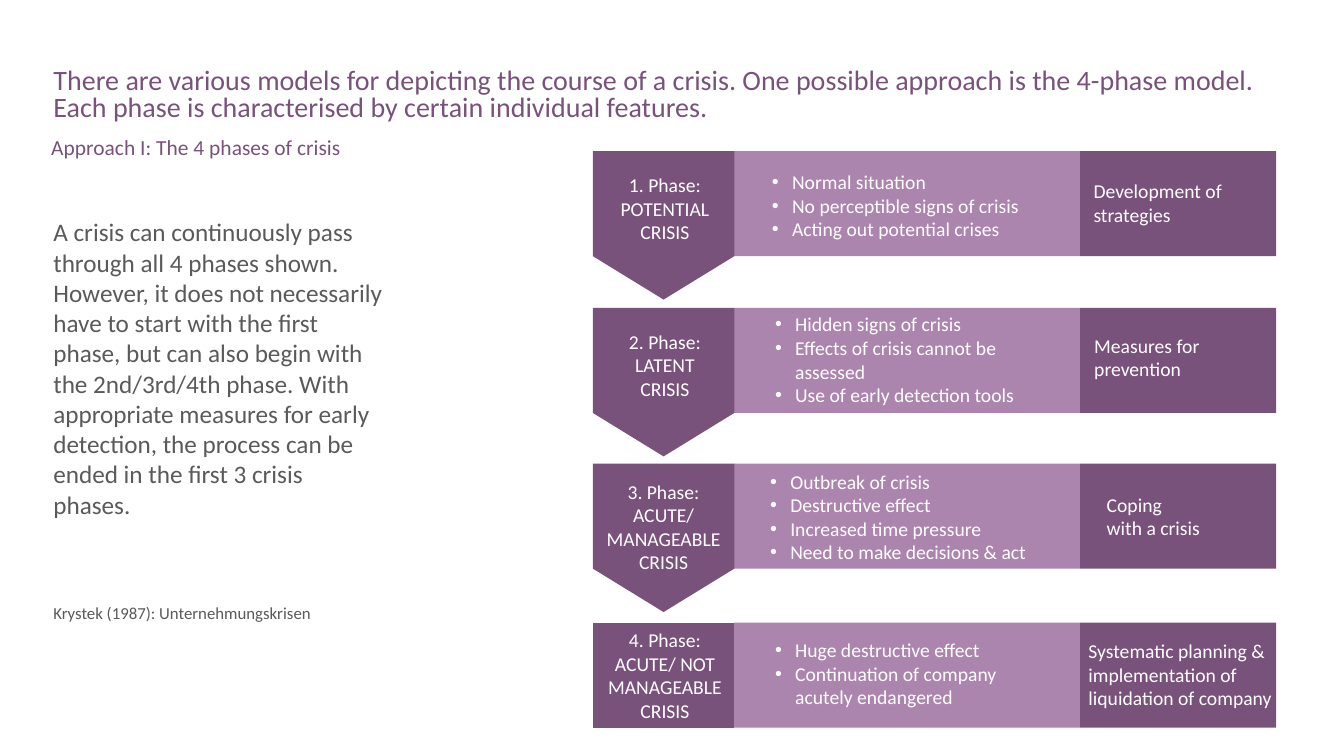
"""Build a slide on the four phases of a crisis."""
import pptx
import pptx.dml.color
import pptx.enum.shapes
import pptx.enum.text
import pptx.oxml
import pptx.oxml.ns
import pptx.util

Pt = pptx.util.Pt
RGB = pptx.dml.color.RGBColor.from_string
ALIGN = pptx.enum.text.PP_ALIGN
RECT = pptx.enum.shapes.MSO_SHAPE.RECTANGLE

THEME = {
    "font": "Calibri", "dark": "79527B", "light": "AB85AD",
    "grey": "595A59", "white": "FFFFFF",
    "title": 20, "body": 18, "sub": 15.3, "row": 14, "note": 12,
}


def write(shape, lines, size, color, align=ALIGN.LEFT, bullet=False):
    frame = shape.text_frame
    frame.word_wrap = True
    frame.auto_size = pptx.enum.text.MSO_AUTO_SIZE.NONE
    frame.vertical_anchor = pptx.enum.text.MSO_ANCHOR.TOP
    frame.text = "\n".join(lines)
    for para in frame.paragraphs:
        para.alignment = align
        if bullet:
            props = para._p.get_or_add_pPr()
            props.set("marL", str(Pt(14.4)))
            props.set("indent", str(-Pt(14.4)))
            space = pptx.oxml.ns.nsdecls("a")
            for tag in (
                f'<a:buClr {space}><a:srgbClr val="{THEME[color]}"/></a:buClr>',
                f'<a:buFont {space} typeface="Arial"/>',
                f'<a:buChar {space} char="•"/>',
            ):
                props.append(pptx.oxml.parse_xml(tag))
        para.font.name = THEME["font"]
        para.font.size = Pt(THEME[size])
        para.font.color.rgb = RGB(THEME[color])
    return frame.paragraphs


def paint(shape, color):
    shape.shadow.inherit = False
    shape.fill.solid()
    shape.fill.fore_color.rgb = RGB(THEME[color])
    shape.line.fill.background()


deck = pptx.Presentation()
deck.slide_width, deck.slide_height = Pt(960), Pt(540)
slide = deck.slides.add_slide(deck.slide_layouts[5])
shapes = slide.shapes

title = shapes.title
title.left, title.top, title.width, title.height = Pt(31), Pt(45.4), Pt(903), Pt(46)
write(title, [
    "There are various models for depicting the course of a crisis. One possible "
    "approach is the 4-phase model. Each phase is characterised by certain "
    "individual features."], "title", "dark")[0].line_spacing = 0.8

sub = shapes.add_textbox(Pt(29.5), Pt(97.2), Pt(904), Pt(20))
write(sub, ["Approach I: The 4 phases of crisis"], "sub", "dark")[0].line_spacing = 0.7

body = shapes.add_textbox(Pt(31), Pt(151.3), Pt(251), Pt(310))
note = write(body, [
    "A crisis can continuously pass through all 4 phases shown. However, it does "
    "not necessarily have to start with the first phase, but can also begin with "
    "the 2nd/3rd/4th phase. With appropriate measures for early detection, the "
    "process can be ended in the first 3 crisis phases.",
    "Krystek (1987): Unternehmungskrisen"], "body", "grey")[1]
note.space_before = Pt(60)
note.font.size = Pt(THEME["note"])

LEFT, MID, RIGHT, END = 423.5, 524.5, 771.5, 911.5
HIGH, TIP = 75, 31

# Each text spot is (left, top, width).
phases = [
    (108, ["1. Phase:", "POTENTIAL CRISIS"], (418, 120.2, 114),
     ["Normal situation", "No perceptible signs of crisis",
      "Acting out potential crises"], (544.3, 118, 212),
     ["Development of strategies"], (774, 124.6, 112)),
    (220, ["2. Phase:", "LATENT", "CRISIS"], (418, 232, 114),
     ["Hidden signs of crisis", "Effects of crisis cannot be\vassessed",
      "Use of early detection tools"], (546.5, 219.6, 212),
     ["Measures for prevention"], (774.5, 234.7, 112)),
    (331.2, ["3. Phase:", "ACUTE/", "MANAGEABLE CRISIS"], (417, 339.2, 114),
     ["Outbreak of crisis", "Destructive effect", "Increased time pressure",
      "Need to make decisions & act"], (543, 332, 212),
     ["Coping", "with a crisis"], (783.4, 348.5, 112)),
    (444.8, ["4. Phase:", "ACUTE/ NOT", "MANAGEABLE CRISIS"], (418, 445, 114),
     ["Huge destructive effect", "Continuation of company acutely endangered"],
     (546.5, 452.2, 212),
     ["Systematic planning & implementation of liquidation of company"],
     (770.4, 453, 147)),
]

for top, name, spot, signs, place, task, site in phases:
    for left, right, color in ((MID, RIGHT, "light"), (RIGHT, END, "dark")):
        paint(shapes.add_shape(
            RECT, Pt(left), Pt(top), Pt(right - left), Pt(HIGH)), color)
    base = top + HIGH
    edge = [(MID, top), (MID, base), (LEFT, base)]
    if top != phases[-1][0]:
        edge.insert(2, ((LEFT + MID) / 2, base + TIP))
    path = shapes.build_freeform(Pt(LEFT), Pt(top))
    path.add_line_segments([(Pt(x), Pt(y)) for x, y in edge])
    paint(path.convert_to_shape(), "dark")
    for lines, (left, high, wide), align, bullet in (
        (name, spot, ALIGN.CENTER, False),
        (signs, place, ALIGN.LEFT, True),
        (task, site, ALIGN.LEFT, False),
    ):
        box = shapes.add_textbox(Pt(left), Pt(high), Pt(wide), Pt(HIGH))
        write(box, lines, "row", "white", align, bullet)

deck.save("out.pptx")
